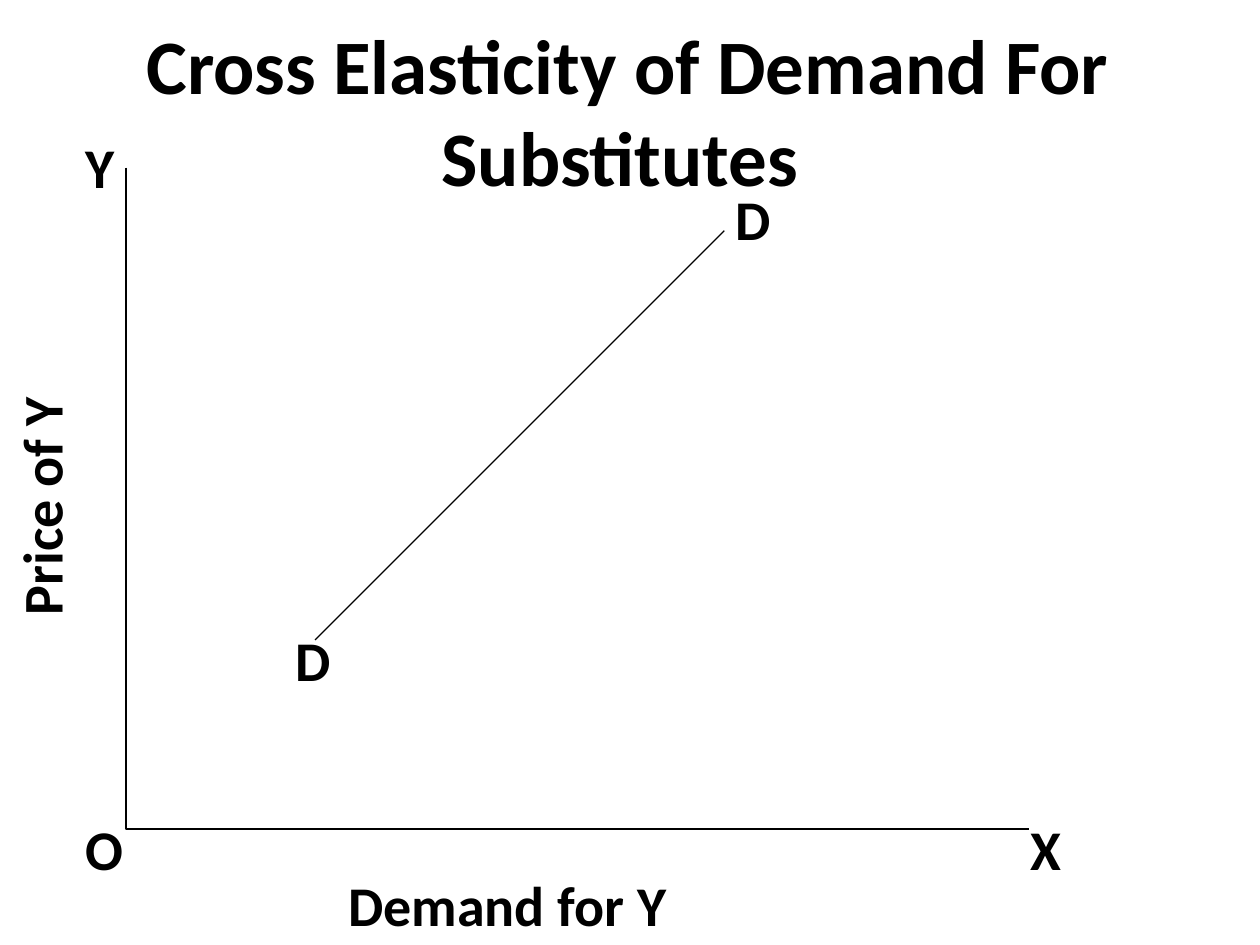
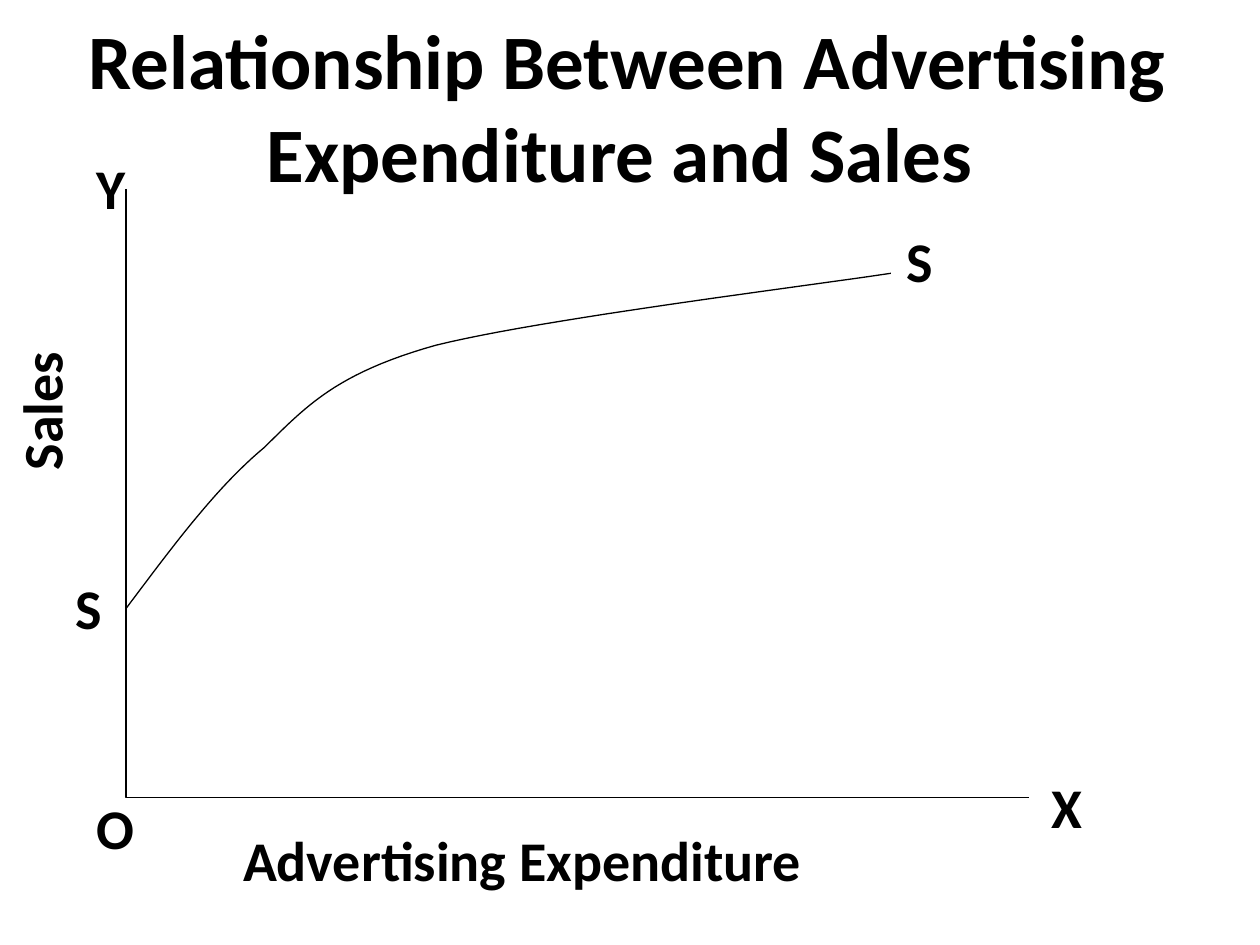
from pptx import Presentation
from pptx.dml.color import RGBColor
from pptx.enum.shapes import MSO_CONNECTOR
from pptx.enum.text import MSO_ANCHOR
from pptx.oxml.ns import qn
from pptx.util import Cm, Pt
from lxml.etree import SubElement

COLORS = {"ink": "000000", "paper": "FFFFFF"}
FONT = "Calibri"
LEFT, RIGHT = 2.54, 20.75
SALES = [
    (2.54, 12.27), (3.4, 11.13), (4.32, 9.86),
    (5.33, 9.02), (6.17, 8.2), (6.76, 7.53),
    (8.79, 6.96), (10.92, 6.43), (16.26, 5.77), (17.96, 5.51),
]


def color(name):
    return RGBColor.from_string(COLORS[name])


def write(shape, words, size=32, spacing=None, hang=0):
    frame = shape.text_frame
    frame.word_wrap = True
    frame.vertical_anchor = MSO_ANCHOR.TOP
    frame.margin_left = frame.margin_right = 0
    frame.margin_top = frame.margin_bottom = 0
    frame.text = words
    para = frame.paragraphs[0]
    props = para._p.get_or_add_pPr()
    props.set("algn", "l")
    props.set("marL", str(Cm(hang)))
    props.set("indent", str(-Cm(hang)))
    if spacing:
        para.line_spacing = Pt(spacing)
    for run in para.runs:
        font = run.font
        font.name, font.size, font.bold = FONT, Pt(size), True
        font.color.rgb = color("ink")


def title(slide, words, left, top, width, hang):
    shape = slide.shapes.title
    shape.left, shape.top = Cm(left), Cm(top)
    shape.width, shape.height = Cm(width), Cm(3.8)
    write(shape, words, size=44, hang=hang)


def label(slide, words, left, top, width=1, height=1.4, **style):
    box = slide.shapes.add_textbox(Cm(left), Cm(top), Cm(width), Cm(height))
    write(box, words, **style)
    return box


def upright(slide, words, top, height):
    box = label(slide, words, 0.38, top, 1.19, height, spacing=31.4)
    box.text_frame._txBody.bodyPr.set("vert", "vert270")


def ink(shape):
    shape.line.color.rgb = color("ink")
    shape.line.width = Pt(0.75)


def line(slide, start, end):
    ends = [Cm(value) for value in (*start, *end)]
    link = slide.shapes.add_connector(MSO_CONNECTOR.STRAIGHT, *ends)
    ink(link)
    SubElement(link._element.spPr, qn("a:effectLst"))


def trace(slide, points):
    start, *rest = [(Cm(x), Cm(y)) for x, y in points]
    pen = slide.shapes.build_freeform(*start)
    pen.add_line_segments(rest, close=False)
    shape = pen.convert_to_shape()
    shape.fill.background()
    shape.shadow.inherit = False
    ink(shape)


def axes(slide, top, base):
    trace(slide, [(LEFT, top), (LEFT, base), (RIGHT, base)])


def bezier(knots, t):
    u = 1 - t
    weights = (u ** 3, 3 * u * u * t, 3 * u * t * t, t ** 3)
    return tuple(
        sum(w * knot[axis] for w, knot in zip(weights, knots))
        for axis in (0, 1)
    )


def curve(slide, knots, steps=24):
    points = [
        bezier(knots[first:first + 4], step / steps)
        for first in range(0, len(knots) - 1, 3)
        for step in range(1, steps + 1)
    ]
    trace(slide, [knots[0], *points])


def page(deck):
    slide = deck.slides.add_slide(deck.slide_layouts[5])
    fill = slide.background.fill
    fill.solid()
    fill.fore_color.rgb = color("paper")
    return slide


def demand(deck):
    slide = page(deck)
    title(slide, "Cross Elasticity of Demand For\vSubstitutes",
          2.95, 0.35, 19.6, 5.95)
    axes(slide, 3.38, 16.71)
    line(slide, (6.35, 12.9), (14.6, 4.65))
    upright(slide, "Price of Y", 7.95, 4.45)
    label(slide, "Demand for Y", 7.02, 17.55, 7)
    for mark, left, top in (
        ("O", 1.73, 16.42), ("Y", 1.73, 2.67), ("X", 20.78, 16.42),
        ("D", 14.83, 3.73), ("D", 5.96, 12.62),
    ):
        label(slide, mark, left, top)


def sales(deck):
    slide = page(deck)
    title(slide, "Relationship Between Advertising\vExpenditure and Sales",
          1.78, 0.26, 22, 3.6)
    axes(slide, 3.81, 16.08)
    curve(slide, SALES)
    upright(slide, "Sales", 7.02, 2.46)
    label(slide, "Advertising Expenditure", 4.9, 16.65, 12)
    for mark, left, top in (
        ("O", 1.94, 16), ("Y", 1.94, 3.09), ("X", 21.2, 15.57),
        ("S", 1.53, 11.56), ("S", 18.27, 4.56),
    ):
        label(slide, mark, left, top)


def main():
    deck = Presentation()
    deck.slide_width, deck.slide_height = Cm(25.4), Cm(19.05)
    demand(deck)
    sales(deck)
    deck.save("out.pptx")


if __name__ == "__main__":
    main()
